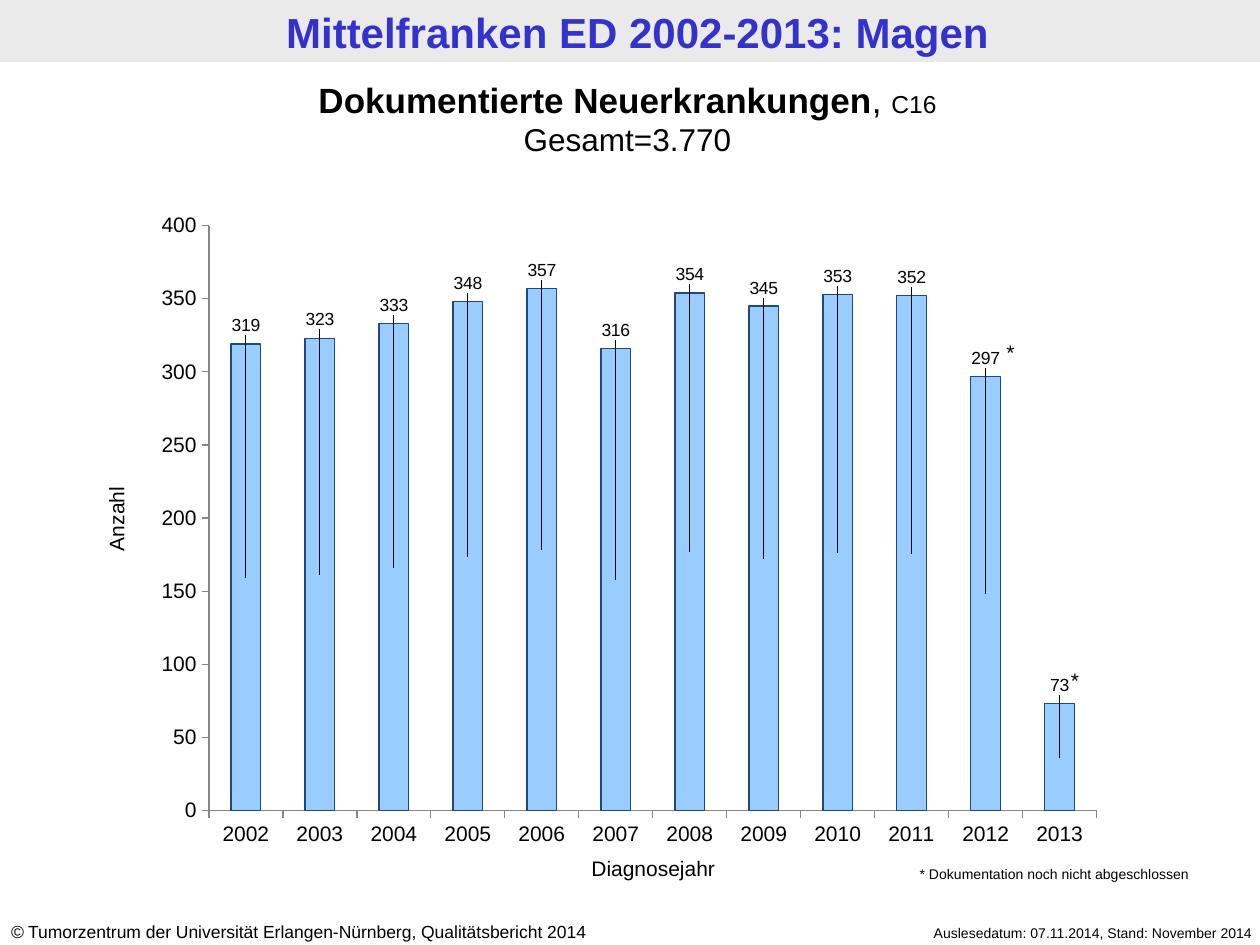
from dataclasses import dataclass

from lxml.etree import SubElement
from pptx import Presentation
from pptx.chart.data import CategoryChartData
from pptx.dml.color import RGBColor
from pptx.enum.chart import XL_CHART_TYPE as ChartType
from pptx.enum.chart import XL_LABEL_POSITION as LabelPosition
from pptx.enum.chart import XL_TICK_MARK as TickMark
from pptx.enum.shapes import MSO_SHAPE as Shape
from pptx.enum.text import MSO_AUTO_SIZE as AutoSize
from pptx.enum.text import PP_ALIGN as Align
from pptx.oxml.ns import qn
from pptx.util import Cm, Pt


@dataclass(frozen=True)
class Theme:
    font: str = "Arial"
    text: RGBColor = RGBColor(0, 0, 0)
    title: RGBColor = RGBColor(0x33, 0x33, 0xCC)
    band: RGBColor = RGBColor(0xEA, 0xEA, 0xEA)
    bar: RGBColor = RGBColor(0x99, 0xCC, 0xFF)
    bar_line: RGBColor = RGBColor(0x1F, 0x49, 0x7D)
    axis: RGBColor = RGBColor(0x86, 0x86, 0x86)
    title_size: int = 24
    heading_size: int = 20
    total_size: int = 18
    code_size: int = 14
    axis_size: int = 12
    small_size: int = 10
    note_size: int = 8


THEME = Theme()
FIRST_YEAR = 2002
CASES = [319, 323, 333, 348, 357, 316, 354, 345, 353, 352, 297, 73]
AXIS_MAX = 400
PLOT = {"x": 0.066, "y": 0.029, "w": 0.914, "h": 0.903}
LABEL_GAP = 0.028  # label centre above the bar, as a share of the chart height


def set_format(target, **values):
    for name, value in values.items():
        setattr(target, name, value)


def set_font(font, size, color=THEME.text, **values):
    set_format(font, name=THEME.font, size=Pt(size), **values)
    font.color.rgb = color


def add_text(page, place, lines, align=Align.LEFT, rotation=0):
    """Each line is a list of (text, size, further font values)."""
    box = page.shapes.add_textbox(*map(Cm, place))
    box.rotation = rotation
    frame = box.text_frame
    set_format(frame, word_wrap=True, auto_size=AutoSize.SHAPE_TO_FIT_TEXT)
    for index, line in enumerate(lines):
        para = frame.add_paragraph() if index else frame.paragraphs[0]
        para.alignment = align
        for text, size, values in line:
            span = para.add_run()
            span.text = text
            set_font(span.font, size, **values)
    return box


def add_title(page, text):
    band = page.shapes.add_shape(Shape.RECTANGLE, 0, 0, Cm(25.4), Cm(1.25))
    band.shadow.inherit = False
    band.fill.solid()
    band.fill.fore_color.rgb = THEME.band
    band.line.fill.background()
    values = {"color": THEME.title, "bold": True}
    box = add_text(page, (0.15, 0.03, 25.4, 1.25),
                   [[(text, THEME.title_size, values)]], Align.CENTER)
    set_format(box.text_frame, margin_left=Cm(0.23), margin_right=Cm(0.23),
               margin_top=Cm(0.1), margin_bottom=Cm(0.1))


def fill_layout(layout, **values):
    manual = SubElement(layout, qn("c:manualLayout"))
    for name, value in values.items():
        SubElement(manual, qn(f"c:{name}")).set("val", str(value))


def fix_plot_area(chart):
    area = chart.element.find(f".//{qn('c:plotArea')}")
    for old in area.findall(qn("c:layout")):
        area.remove(old)
    layout = SubElement(area, qn("c:layout"))
    area.insert(0, layout)
    fill_layout(layout, layoutTarget="inner", xMode="edge", yMode="edge", **PLOT)


def lift_labels(chart, series):
    """Move each value label from the middle of its bar to just above it."""
    for index in range(len(CASES)):
        label = series.points[index].data_label
        set_font(label.font, THEME.small_size)
        label.position = LabelPosition.CENTER
    for label, cases in zip(chart.element.iter(qn("c:dLbl")), CASES):
        layout = SubElement(label, qn("c:layout"))
        label.insert(1, layout)
        rise = cases / AXIS_MAX * PLOT["h"] / 2 + LABEL_GAP
        fill_layout(layout, x=0, y=round(-rise, 3))


def style_axis(axis):
    set_format(axis, has_major_gridlines=False, major_tick_mark=TickMark.OUTSIDE,
               minor_tick_mark=TickMark.NONE)
    set_font(axis.tick_labels.font, THEME.axis_size)
    axis.format.line.color.rgb = THEME.axis
    axis.format.line.width = Pt(0.75)


def add_case_chart(page):
    data = CategoryChartData()
    data.categories = [str(FIRST_YEAR + index) for index in range(len(CASES))]
    data.add_series("Series 1", CASES)
    place = map(Cm, (2.92, 4.17, 19.58, 13.06))
    chart = page.shapes.add_chart(ChartType.COLUMN_STACKED, *place, data).chart
    set_format(chart, has_legend=False, has_title=False)
    set_font(chart.font, THEME.axis_size)
    style_axis(chart.category_axis)
    style_axis(chart.value_axis)
    set_format(chart.value_axis, minimum_scale=0, maximum_scale=AXIS_MAX,
               major_unit=50)
    plot = chart.plots[0]
    set_format(plot, gap_width=150, overlap=100, vary_by_categories=False)
    series = plot.series[0]
    series.format.fill.solid()
    series.format.fill.fore_color.rgb = THEME.bar
    series.format.line.color.rgb = THEME.bar_line
    series.format.line.width = Pt(0.75)
    series.data_labels.show_value = True
    set_font(series.data_labels.font, THEME.small_size)
    lift_labels(chart, series)
    fix_plot_area(chart)


def add_heading(page):
    lines = [
        [("Dokumentierte Neuerkrankungen", THEME.heading_size, {"bold": True}),
         (", ", THEME.heading_size, {}),
         ("C16", THEME.code_size, {})],
        [("Gesamt=3.770", THEME.total_size, {})],
    ]
    add_text(page, (-0.1, 1.45, 25.5, 1.88), lines, Align.CENTER)


def add_axis_titles(page):
    for text, place, rotation in (("Diagnosejahr", (10.31, 17.12, 5.72, 0.76), 0),
                                  ("Anzahl", (0.79, 10.08, 3.1, 0.76), 270)):
        add_text(page, place, [[(text, THEME.axis_size, {})]], Align.CENTER, rotation)


def add_notes(page):
    for left, top in ((19.71, 6.73), (21.01, 13.34)):
        add_text(page, (left, top, 0.99, 0.76),
                 [[("*", THEME.axis_size, {})]], Align.RIGHT)
    add_text(page, (18.29, 17.32, 6.86, 0.61),
             [[("* Dokumentation noch nicht abgeschlossen", THEME.note_size, {})]])


def add_footer(page):
    add_text(page, (16.89, 18.52, 8.61, 0.61),
             [[("Auslesedatum: 07.11.2014, Stand: November 2014",
                THEME.note_size, {})]], Align.RIGHT)
    owner = " Tumorzentrum der Universität Erlangen-Nürnberg, Qualitätsbericht 2014"
    add_text(page, (-0.03, 18.44, 13.31, 0.69),
             [[("©", THEME.small_size, {"italic": True}),
               (owner, THEME.small_size, {})]])


def main():
    deck = Presentation()
    set_format(deck, slide_width=Cm(25.4), slide_height=Cm(19.05))
    page = deck.slides.add_slide(deck.slide_layouts[6])
    add_title(page, "Mittelfranken ED 2002-2013: Magen")
    add_footer(page)
    add_case_chart(page)
    add_heading(page)
    add_axis_titles(page)
    add_notes(page)
    deck.save("out.pptx")


if __name__ == "__main__":
    main()
